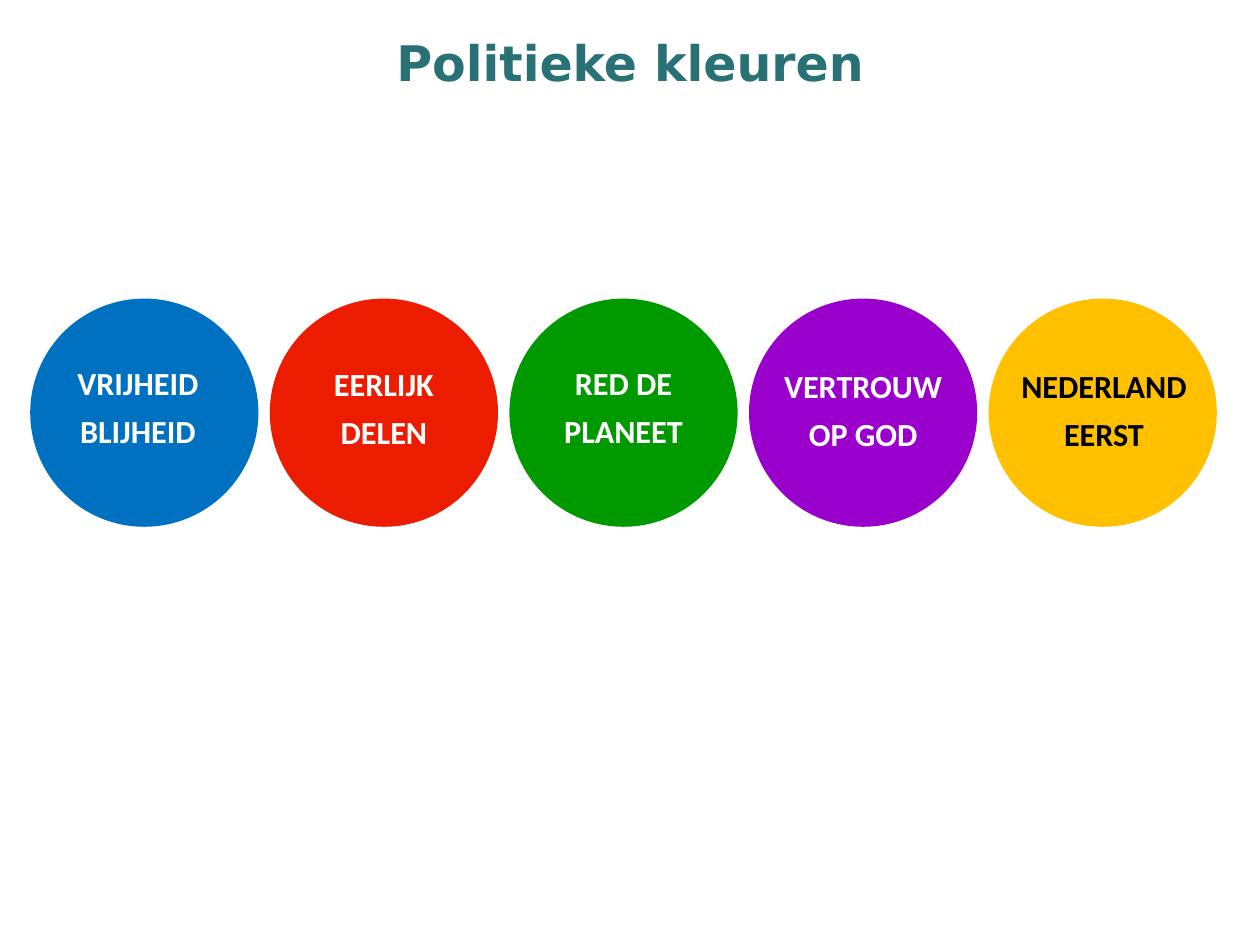
from pptx import Presentation
from pptx.dml.color import RGBColor
from pptx.enum.shapes import MSO_SHAPE
from pptx.enum.text import MSO_ANCHOR, MSO_AUTO_SIZE, PP_ALIGN
from pptx.util import Cm, Pt

OVAL = MSO_SHAPE.OVAL
TOP = MSO_ANCHOR.TOP
GROW = MSO_AUTO_SIZE.SHAPE_TO_FIT_TEXT
CENTER = PP_ALIGN.CENTER

TEAL = RGBColor(0x29, 0x71, 0x75)
BLUE = RGBColor(0x00, 0x70, 0xC0)
RED = RGBColor(0xEB, 0x1C, 0x00)
GREEN = RGBColor(0x00, 0x99, 0x00)
PURPLE = RGBColor(0x99, 0x00, 0xCC)
YELLOW = RGBColor(0xFF, 0xC0, 0x00)
WHITE = RGBColor(0xFF, 0xFF, 0xFF)
BLACK = RGBColor(0x00, 0x00, 0x00)

DIAMETER = 4.6
PITCH = 4.83
FIRST_LEFT = 0.61
CIRCLE_TOP = 6.02
SLOGAN_HEIGHT = 2.23

SLOGANS = [
    ("vrijheid\nblijheid", BLUE, WHITE, 0.48, 7.04, DIAMETER),
    ("eerlijk\ndelen", RED, WHITE, 5.44, 7.06, DIAMETER),
    ("red de planeet", GREEN, WHITE, 10.27, 7.04, DIAMETER),
    ("vertrouw op god", PURPLE, WHITE, 15.1, 7.09, DIAMETER),
    ("nederland eerst", YELLOW, BLACK, 19.84, 7.09, 4.83),
]


class ColourSlide:
    title_font = "DejaVu Sans"
    slogan_font = "Calibri"

    def __init__(self, presentation):
        self.slide = presentation.slides.add_slide(presentation.slide_layouts[5])
        self.group = self.slide.shapes.add_group_shape()

    def set_text(self, frame, text, font_name, size, colour, small_caps=False):
        frame.text = text
        frame.word_wrap = True
        frame.auto_size = GROW
        frame.vertical_anchor = TOP
        for paragraph in frame.paragraphs:
            paragraph.alignment = CENTER
            for run in paragraph.runs:
                run.font.name = font_name
                run.font.size = Pt(size)
                run.font.bold = True
                run.font.color.rgb = colour
                if small_caps:
                    run._r.get_or_add_rPr().set("cap", "small")

    def title(self, text):
        heading = self.slide.shapes.title
        heading.left, heading.top = Cm(0), Cm(0.53)
        heading.width, heading.height = Cm(25.4), Cm(1.45)
        self.set_text(heading.text_frame, text, self.title_font, 28, TEAL)

    def circle(self, left, colour):
        disc = self.group.shapes.add_shape(
            OVAL, Cm(left), Cm(CIRCLE_TOP), Cm(DIAMETER), Cm(DIAMETER))
        disc.shadow.inherit = False
        disc.fill.solid()
        disc.fill.fore_color.rgb = colour
        disc.line.fill.background()

    def slogan(self, text, colour, left, top, width):
        label = self.group.shapes.add_textbox(
            Cm(left), Cm(top), Cm(width), Cm(SLOGAN_HEIGHT))
        self.set_text(label.text_frame, text, self.slogan_font, 23, colour, True)


def main():
    presentation = Presentation()
    presentation.slide_width = Cm(25.4)
    presentation.slide_height = Cm(19.05)
    page = ColourSlide(presentation)
    page.title("Politieke kleuren")
    for index, (_, fill, *_) in enumerate(SLOGANS):
        page.circle(FIRST_LEFT + index * PITCH, fill)
    for text, _, colour, left, top, width in SLOGANS:
        page.slogan(text, colour, left, top, width)
    presentation.save("out.pptx")


if __name__ == "__main__":
    main()
